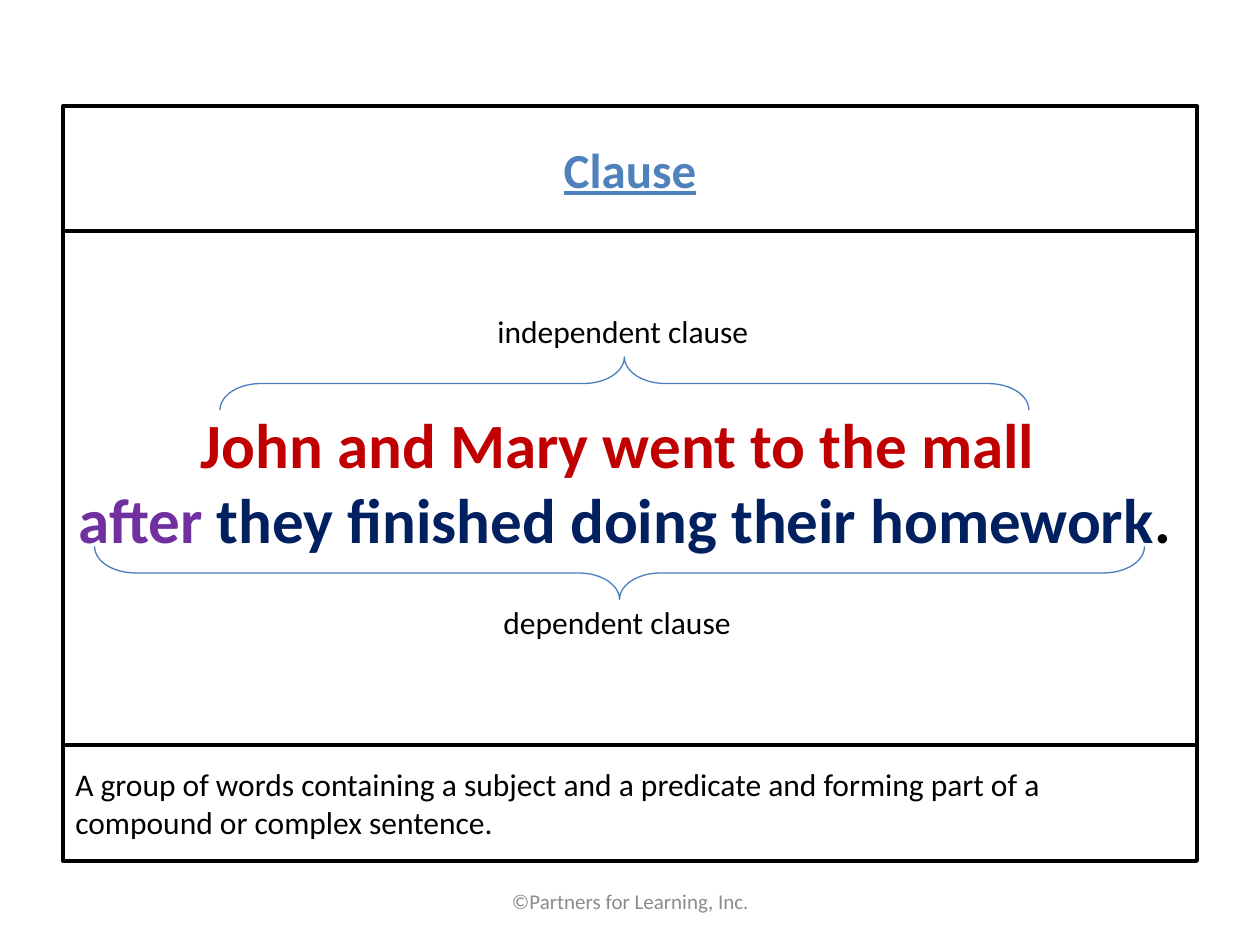
from pptx import Presentation
from pptx.dml.color import RGBColor
from pptx.enum.shapes import MSO_SHAPE as Shape
from pptx.enum.text import MSO_ANCHOR as Anchor, PP_ALIGN as Align
from pptx.util import Emu, Pt

PX = 914400 / 126
BLACK = RGBColor(0x00, 0x00, 0x00)
GRAY = RGBColor(0x8C, 0x8C, 0x8C)
TITLE_BLUE = RGBColor(0x4F, 0x81, 0xBD)
BRACE_BLUE = RGBColor(0x4B, 0x7E, 0xBC)
RED = RGBColor(0xC0, 0x00, 0x00)
PURPLE = RGBColor(0x70, 0x30, 0xA0)
NAVY = RGBColor(0x00, 0x20, 0x60)


def px(*lengths):
    """Turn pixel lengths into EMU."""
    return [Emu(round(length * PX)) for length in lengths]


def add_run(paragraph, text, size, color, bold=False, underline=False):
    run = paragraph.add_run()
    run.text = text
    font = run.font
    font.name = "Calibri"
    font.size = Pt(size)
    font.color.rgb = color
    font.bold = bold
    font.underline = underline


presentation = Presentation()
presentation.slide_width, presentation.slide_height = px(1260, 945)
slide = presentation.slides.add_slide(presentation.slide_layouts[6])
shapes = slide.shapes

# Card: title, example and definition panels
panels = []
for top, height in [(106, 125), (231, 514), (745, 116)]:
    panel = shapes.add_shape(Shape.RECTANGLE, *px(63, top, 1134, height))
    panel.shadow.inherit = False
    panel.fill.background()
    panel.line.color.rgb = BLACK
    panel.line.width = Pt(2.25)
    panel.text_frame.vertical_anchor = Anchor.MIDDLE
    panels.append(panel)
title_panel, example_panel, definition_panel = panels

title = title_panel.text_frame.paragraphs[0]
title.alignment = Align.CENTER
add_run(title, "Clause", 28, TITLE_BLUE, bold=True, underline=True)

definition = definition_panel.text_frame.paragraphs[0]
definition.alignment = Align.LEFT
add_run(definition, "A group of words containing a subject and a predicate and "
        "forming part of a compound or complex sentence.", 18, BLACK)

# Example sentence, one clause per line
sentence = shapes.add_textbox(*px(53, 399, 1144, 165)).text_frame
sentence.word_wrap = True
clauses = [
    [("John and Mary went to the mall ", RED)],
    [("after ", PURPLE), ("they finished doing their homework", NAVY), (".", BLACK)],
]
for index, clause in enumerate(clauses):
    paragraph = sentence.add_paragraph() if index else sentence.paragraphs[0]
    paragraph.alignment = Align.CENTER
    for text, color in clause:
        add_run(paragraph, text, 36, color, bold=True)

# Braces, placed upright and then turned about their centres
for left, top, length, rotation in [(598, -21, 809, 270), (593, 48, 1050, 90)]:
    brace = shapes.add_shape(Shape.RIGHT_BRACE, *px(left, top, 53, length))
    brace.rotation = rotation
    brace.adjustments[0] = 0.77
    brace.adjustments[1] = 0.5
    brace.shadow.inherit = False
    brace.fill.background()
    brace.line.color.rgb = BRACE_BLUE
    brace.line.width = Pt(0.75)

for text, left, top, width in [
    ("independent clause", 485, 306, 281),
    ("dependent clause", 491, 597, 256),
]:
    label = shapes.add_textbox(*px(left, top, width, 50)).text_frame
    label.word_wrap = False
    add_run(label.paragraphs[0], text, 18, BLACK)

footer = shapes.add_textbox(*px(431, 876, 399, 50)).text_frame
footer.word_wrap = True
footer.vertical_anchor = Anchor.MIDDLE
footer.paragraphs[0].alignment = Align.CENTER
add_run(footer.paragraphs[0], "©Partners for Learning, Inc.", 12, GRAY)

presentation.save("out.pptx")
